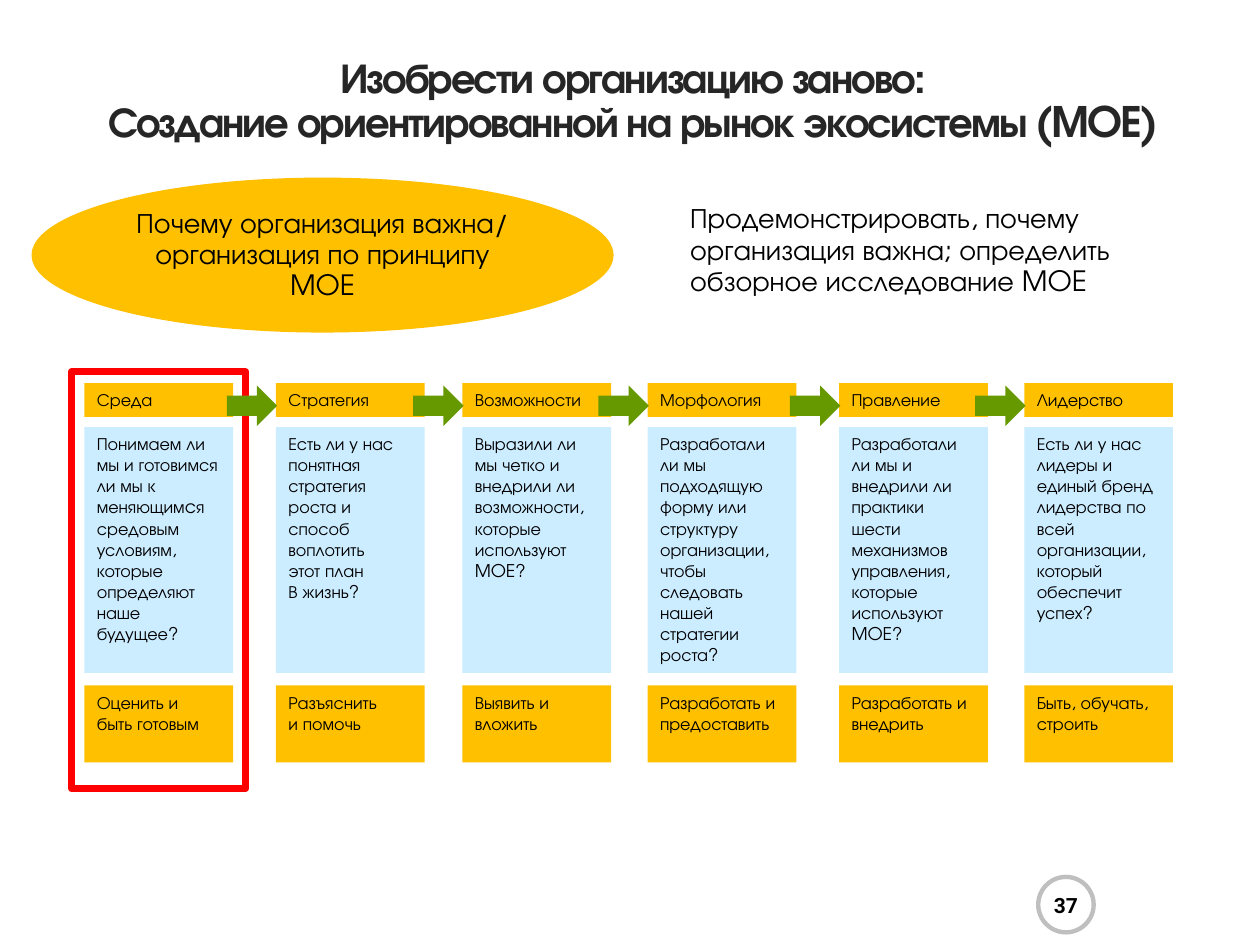
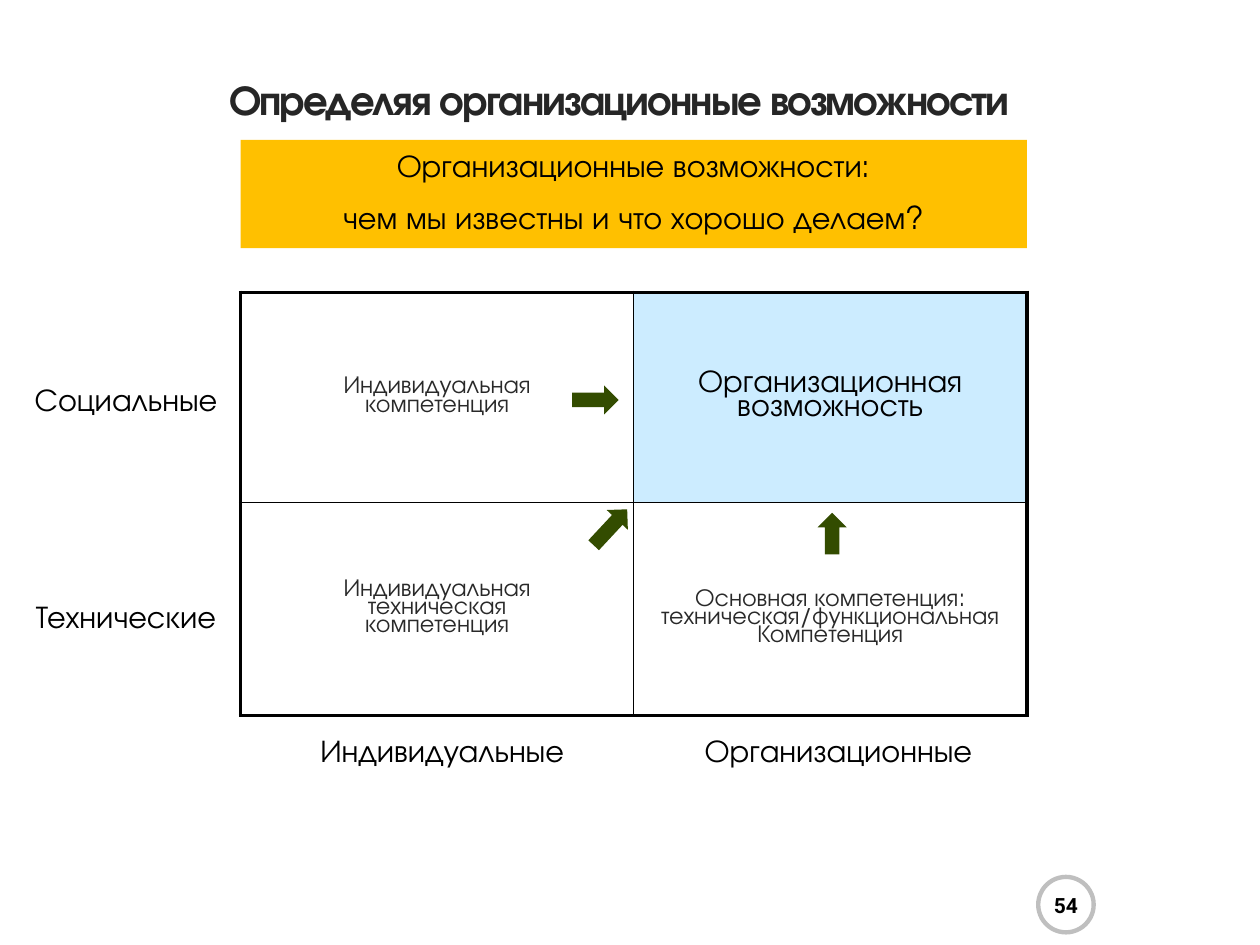
from lxml import etree
from pptx import Presentation
from pptx.dml.color import RGBColor
from pptx.enum import shapes, text
from pptx.oxml.ns import qn
from pptx.util import Inches, Pt

SHAPE = shapes.MSO_SHAPE
ANCHOR = text.MSO_ANCHOR
ALIGN = text.PP_ALIGN

FONT = "TeX Gyre Adventor"
NUMBER_FONT = "Roboto"
BLACK, WHITE, TITLE_GREY, CELL_GREY = "000000", "FFFFFF", "262626", "292929"
AMBER, SKY, RED, RING = "FFC000", "CCECFF", "FF0000", "BFBFBF"
GREEN, DARK_GREEN = "669900", "334C00"

ECOSYSTEM_TITLE = ("Изобрести организацию заново:\v"
                   "Создание ориентированной на рынок экосистемы (MOE)")
WHY = "Почему организация важна/ организация по принципу MOE"
GOAL = "Продемонстрировать, почему организация важна; определить обзорное исследование MOE"

STAGES = [
    (0.67, "Среда",
     "Понимаем ли мы и готовимся ли мы к\nменяющимcя средовым условиям, которые определяют наше будущее?",
     "Оценить и\nбыть готовым"),
    (2.19, "Стратегия",
     "Есть ли у нас понятная стратегия\nроста и\nспособ\nвоплотить\nэтот план\nВ жизнь?",
     "Разъяснить\nи помочь"),
    (3.67, "Возможности",
     "Выразили ли мы четко и внедрили ли возможности, которые используют MOE?",
     "Выявить и вложить"),
    (5.14, "Морфология",
     "Разработали ли мы подходящую\nформу или структуру организации, чтобы следовать нашей стратегии роста?",
     "Разработать и\nпредоставить"),
    (6.66, "Правление",
     "Разработали ли мы и внедрили ли практики шести механизмов управления, которые используют MOE?",
     "Разработать и внедрить"),
    (8.13, "Лидерство",
     "Есть ли у нас лидеры и единый бренд лидерства по всей организации, который обеспечит успех?",
     "Быть, обучать, строить"),
]
STAGE_WIDTH = 1.18
STAGE_ROWS = [(3.04, 0.27, AMBER), (3.39, 1.95, SKY), (5.44, 0.61, AMBER)]

CAPABILITY_TITLE = "Определяя организационные возможности"
QUESTION = "Организационные возможности:\nчем мы известны и что хорошо делаем?"
MATRIX_LEFT, MATRIX_TOP, MATRIX_COLUMN = 1.91, 2.32, 3.12
MATRIX_ROWS = [1.67, 1.69]
MATRIX = [
    [("Индивидуальная\nкомпетенция", 14, CELL_GREY, WHITE, 0.04),
     ("Организационная возможность", 18, BLACK, SKY, 0.04)],
    [("Индивидуальная\nтехническая\nкомпетенция", 14, CELL_GREY, WHITE, 0.04),
     ("Основная компетенция:\nтехническая/функциональная\nКомпетенция", 14, CELL_GREY, WHITE, 0.2)],
]
AXIS_LABELS = [
    ("Социальные", 0.09, 2.97, 1.82),
    ("Технические", 0.09, 4.69, 1.82),
    ("Индивидуальные", 2.32, 5.75, 2.38),
    ("Организационные", 5.37, 5.75, 2.57),
]
MATRIX_ARROWS = [
    (4.73, 3.99, 0.39, 43),
    (6.49, 4.07, 0.33, 0),
    (4.61, 2.99, 0.37, 90),
]


def color(code):
    return RGBColor.from_string(code)


def write(frame, words, size, ink=BLACK, align=ALIGN.LEFT, font=FONT,
          bold=False, line_spacing=None, gap=0, tracking=None):
    frame.text = words
    for index, paragraph in enumerate(frame.paragraphs):
        paragraph.alignment = align
        if line_spacing:
            paragraph.line_spacing = line_spacing
        if gap and index:
            paragraph.space_before = Pt(gap)
        for run in paragraph.runs:
            run.font.size = Pt(size)
            run.font.name = font
            run.font.bold = bold
            run.font.color.rgb = color(ink)
            if tracking:
                run.font._element.set("spc", str(tracking))


def add_block(slide, kind, box, fill=None, line=None, line_width=1, anchor=ANCHOR.TOP):
    block = slide.shapes.add_shape(kind, *map(Inches, box))
    block.shadow.inherit = False
    if fill:
        block.fill.solid()
        block.fill.fore_color.rgb = color(fill)
    else:
        block.fill.background()
    if line:
        block.line.color.rgb = color(line)
        block.line.width = Pt(line_width)
    else:
        block.line.fill.background()
    block.text_frame.word_wrap = True
    block.text_frame.vertical_anchor = anchor
    return block


def add_words(slide, box, wrap=True, anchor=ANCHOR.TOP):
    frame = slide.shapes.add_textbox(*map(Inches, box)).text_frame
    frame.word_wrap = wrap
    frame.vertical_anchor = anchor
    return frame


def start_slide(deck, title, title_left, number):
    slide = deck.slides.add_slide(deck.slide_layouts[6])
    badge = add_block(slide, SHAPE.OVAL, (8.24, 6.96, 0.44, 0.44), WHITE, RING, 2.5, ANCHOR.MIDDLE)
    frame = badge.text_frame
    frame.word_wrap = False
    frame.margin_left = frame.margin_right = frame.margin_top = frame.margin_bottom = 0
    write(frame, str(number), 12, align=ALIGN.CENTER, font=NUMBER_FONT, bold=True)
    heading = add_words(slide, (title_left, 0.42, 8.55, 0.78), anchor=ANCHOR.MIDDLE)
    write(heading, title, 24, TITLE_GREY, ALIGN.CENTER, bold=True,
          line_spacing=Pt(25.1), tracking=-110)
    return slide


def set_borders(cell, widths):
    properties = cell._tc.get_or_add_tcPr()
    for side, width in zip("LRTB", widths):
        edge = etree.SubElement(properties, qn(f"a:ln{side}"), w=str(Pt(width)))
        paint = etree.SubElement(edge, qn("a:solidFill"))
        etree.SubElement(paint, qn("a:srgbClr"), val=BLACK)


def build_ecosystem(deck):
    slide = start_slide(deck, ECOSYSTEM_TITLE, 0.75, 37)
    why = add_block(slide, SHAPE.OVAL, (0.25, 1.41, 4.62, 1.23), AMBER, anchor=ANCHOR.MIDDLE)
    write(why.text_frame, WHY, 16, align=ALIGN.CENTER, line_spacing=0.93)
    write(add_words(slide, (5.38, 1.57, 4.47, 0.9)), GOAL, 16, line_spacing=0.93)

    add_block(slide, SHAPE.RECTANGLE, (0.57, 2.95, 1.38, 3.31), line=RED, line_width=4)
    for left, *texts in STAGES:
        for words, (top, height, fill) in zip(texts, STAGE_ROWS):
            block = add_block(slide, SHAPE.RECTANGLE, (left, top, STAGE_WIDTH, height), fill)
            write(block.text_frame, words, 10)
    for left, *_ in STAGES[1:]:
        add_block(slide, SHAPE.RIGHT_ARROW, (left - 0.39, 3.06, 0.4, 0.32), GREEN)


def build_capabilities(deck):
    slide = start_slide(deck, CAPABILITY_TITLE, 0.64, 54)
    matrix = slide.shapes.add_table(
        2, 2, Inches(MATRIX_LEFT), Inches(MATRIX_TOP),
        Inches(2 * MATRIX_COLUMN), Inches(sum(MATRIX_ROWS))).table
    matrix.first_row = matrix.horz_banding = False
    for column in matrix.columns:
        column.width = Inches(MATRIX_COLUMN)
    for r, row in enumerate(MATRIX):
        matrix.rows[r].height = Inches(MATRIX_ROWS[r])
        for c, (words, size, ink, fill, top_margin) in enumerate(row):
            cell = matrix.cell(r, c)
            outer = (c == 0, c == 1, r == 0, r == 1)
            set_borders(cell, [2.25 if edge else 1 for edge in outer])
            cell.fill.solid()
            cell.fill.fore_color.rgb = color(fill)
            cell.vertical_anchor = ANCHOR.MIDDLE
            cell.margin_top, cell.margin_bottom = Inches(top_margin), Inches(0.04)
            write(cell.text_frame, words, size, ink, ALIGN.CENTER, line_spacing=0.8)

    for label, left, top, width in AXIS_LABELS:
        write(add_words(slide, (left, top, width, 0.4), wrap=False), label, 18, align=ALIGN.CENTER)
    for left, top, length, angle in MATRIX_ARROWS:
        arrow = add_block(slide, SHAPE.UP_ARROW, (left, top, 0.23, length), DARK_GREEN)
        arrow.rotation = angle
    banner = add_block(slide, SHAPE.RECTANGLE, (MATRIX_LEFT, 1.11, 2 * MATRIX_COLUMN, 0.86), AMBER)
    write(banner.text_frame, QUESTION, 18, align=ALIGN.CENTER, gap=8)


def main():
    deck = Presentation()
    deck.slide_width, deck.slide_height = Inches(10), Inches(7.5)
    build_ecosystem(deck)
    build_capabilities(deck)
    deck.save("out.pptx")


if __name__ == "__main__":
    main()
